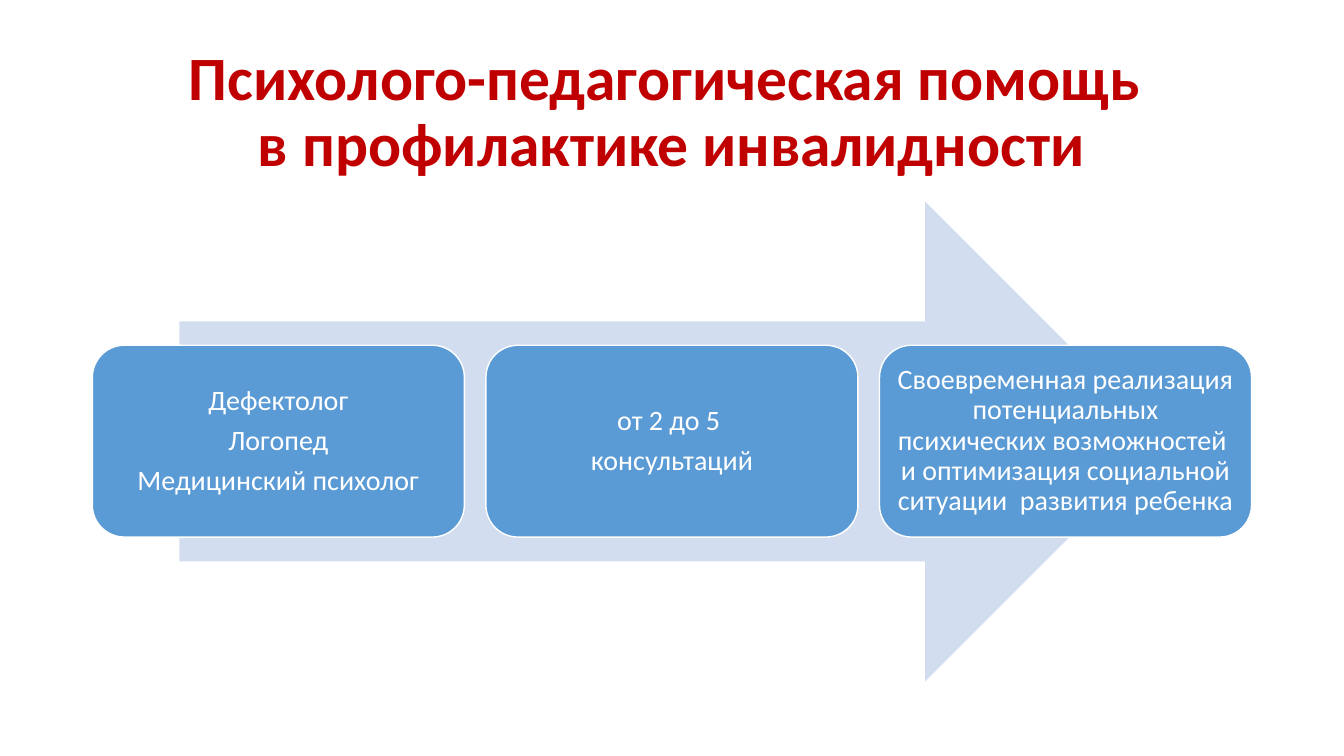
import pptx
import pptx.util
import pptx.dml.color
import pptx.enum.shapes
import pptx.enum.text

Pt = pptx.util.Pt
SHAPE = pptx.enum.shapes.MSO_SHAPE
CENTER = pptx.enum.text.PP_ALIGN.CENTER
MIDDLE = pptx.enum.text.MSO_ANCHOR.MIDDLE

# Content
HEADING = "Психолого-педагогическая помощь \vв профилактике инвалидности"
STAGES = [
    ["Дефектолог", "Логопед", "Медицинский психолог"],
    ["от 2 до 5 ", "консультаций"],
    ["Своевременная реализация потенциальных психических возможностей "
     " и оптимизация социальной ситуации  развития ребенка"],
]
COLORS = {"heading": "C00000", "arrow": "D2DEEF", "stage": "5B9BD5", "white": "FFFFFF"}
FONT = "Calibri"

# Layout, in points
LEFT, WIDTH = 66, 828
STAGE_TOP, STAGE_HEIGHT, STAGE_GAP = 246.6, 137, 15.4
STAGE_WIDTH = (WIDTH - STAGE_GAP * (len(STAGES) - 1)) / len(STAGES)
STAGE_INSET = 5.75


def rgb(name):
    return pptx.dml.color.RGBColor.from_string(COLORS[name])


def format_paragraph(paragraph, size, color, bold=False):
    paragraph.alignment = CENTER
    paragraph.line_spacing = 0.9
    paragraph.font.name = FONT
    paragraph.font.size = Pt(size)
    paragraph.font.bold = bold
    paragraph.font.color.rgb = rgb(color)


def add_filled(slide, kind, left, top, width, height, color):
    filled = slide.shapes.add_shape(kind, Pt(left), Pt(top), Pt(width), Pt(height))
    filled.shadow.inherit = False
    filled.fill.solid()
    filled.fill.fore_color.rgb = rgb(color)
    return filled


def add_stage(slide, left, lines):
    stage = add_filled(slide, SHAPE.ROUNDED_RECTANGLE, left, STAGE_TOP,
                       STAGE_WIDTH, STAGE_HEIGHT, "stage")
    stage.line.color.rgb = rgb("white")
    stage.line.width = Pt(1)
    frame = stage.text_frame
    frame.word_wrap = True
    frame.vertical_anchor = MIDDLE
    frame.margin_left = frame.margin_right = Pt(STAGE_INSET)
    frame.margin_top = frame.margin_bottom = Pt(STAGE_INSET)
    frame.text = "\n".join(lines)
    for paragraph in frame.paragraphs:
        format_paragraph(paragraph, 20, "white")
        paragraph.space_after = Pt(7)


def main():
    deck = pptx.Presentation()
    deck.slide_width, deck.slide_height = Pt(960), Pt(540)
    slide = deck.slides.add_slide(deck.slide_layouts[5])

    # Heading
    heading = slide.shapes.title
    heading.left, heading.top = Pt(LEFT), Pt(28.8)
    heading.width, heading.height = Pt(WIDTH), Pt(104.4)
    heading.text_frame.text = HEADING
    heading.text_frame.word_wrap = True
    heading.text_frame.vertical_anchor = MIDDLE
    format_paragraph(heading.text_frame.paragraphs[0], 44, "heading", bold=True)

    # Arrow behind the stages
    arrow = add_filled(slide, SHAPE.RIGHT_ARROW, 128.2, 144, 704, 342.7, "arrow")
    arrow.line.fill.background()

    # Stages
    for index, lines in enumerate(STAGES):
        add_stage(slide, LEFT + index * (STAGE_WIDTH + STAGE_GAP), lines)

    deck.save("out.pptx")


if __name__ == "__main__":
    main()
